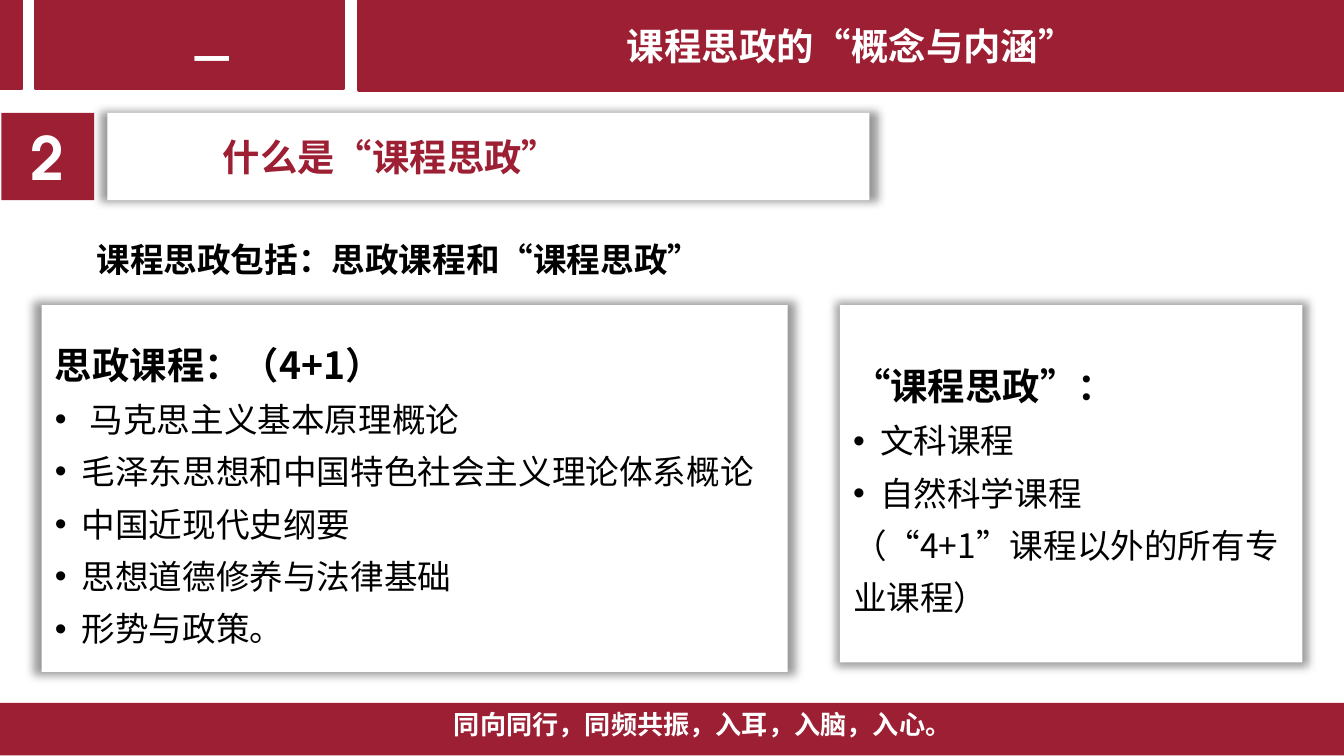
from lxml.etree import SubElement
from pptx import Presentation
from pptx.dml.color import RGBColor
from pptx.enum.shapes import MSO_SHAPE as Shape
from pptx.enum.text import MSO_ANCHOR as Anchor, MSO_AUTO_SIZE as AutoSize, PP_ALIGN as Align
from pptx.oxml.ns import qn
from pptx.util import Inches, Pt

COLORS = {"red": "9D1F33", "white": "FFFFFF", "black": "000000"}
BODY_FONT = "Noto Sans CJK SC"
NUMBER_FONT = "TeX Gyre Adventor"


def rgb(name):
    return RGBColor.from_string(COLORS[name])


def add_line(frame, text, size=18, bold=False, color="black", font=BODY_FONT,
             align=Align.LEFT, spacing=None, indent=0, bullet=False):
    """Write one paragraph, using the frame's empty first one if it is free."""
    first = frame.paragraphs[0]
    line = frame.add_paragraph() if first.runs else first
    line.alignment = align
    line.line_spacing = spacing
    run = line.add_run()
    run.text = text
    run.font.size, run.font.bold, run.font.name = Pt(size), bold, font
    run.font.color.rgb = rgb(color)
    SubElement(run.font._element, qn("a:ea"), typeface=font)
    properties = line._p.get_or_add_pPr()
    properties.set("marL", str(Inches(indent)))
    properties.set("indent", str(Inches(-indent if bullet else 0)))
    if bullet:
        SubElement(properties, qn("a:buFont"), typeface="Arial")
        SubElement(properties, qn("a:buChar"), char="•")


def paint(shape, fill, outline=None):
    shape.fill.solid()
    shape.fill.fore_color.rgb = rgb(fill)
    if outline:
        shape.line.color.rgb = rgb(outline)
        shape.line.width = Pt(2)
    else:
        shape.line.fill.background()


def add_block(slide, box, fill="red", outline=None):
    block = slide.shapes.add_shape(Shape.RECTANGLE, *map(Inches, box))
    block.shadow.inherit = False
    paint(block, fill, outline)
    block.text_frame.vertical_anchor = Anchor.MIDDLE
    return block


def add_card(slide, box):
    """Add a white panel with a soft shadow on all sides; return its text frame."""
    card = add_block(slide, box, "white")
    effects = card._element.spPr.find(qn("a:effectLst"))
    shadow = SubElement(effects, qn("a:outerShdw"), blurRad=str(Pt(5)), sx="102000",
                        sy="102000", algn="ctr", rotWithShape="0")
    tint = SubElement(shadow, qn("a:srgbClr"), val=COLORS["black"])
    SubElement(tint, qn("a:alpha"), val="40000")
    return card.text_frame


def add_label(slide, box, text, wrap=False, **text_format):
    frame = slide.shapes.add_textbox(*map(Inches, box)).text_frame
    frame.word_wrap = wrap
    add_line(frame, text, bold=True, **text_format)


def add_title(slide, box, text):
    title = slide.shapes.title
    title.left, title.top, title.width, title.height = map(Inches, box)
    paint(title, "red", "red")
    frame = title.text_frame
    frame.auto_size = AutoSize.NONE
    frame.vertical_anchor = Anchor.MIDDLE
    add_line(frame, text, size=20, bold=True, color="white", align=Align.CENTER)


def add_course_card(slide, box, heading, courses, note=None):
    frame = add_card(slide, box)
    add_line(frame, heading, size=20, bold=True, spacing=1.3)
    for course, indent in courses:
        add_line(frame, course, spacing=1.3, indent=indent, bullet=True)
    if note:
        add_line(frame, note, spacing=1.3)


def main():
    deck = Presentation()
    deck.slide_width = Inches(10)
    deck.slide_height = deck.slide_width * 9 // 16
    slide = deck.slides.add_slide(deck.slide_layouts[5])

    add_block(slide, (0, 5.23, 10.05, 0.39))
    add_label(slide, (3.28, 5.22, 3.93, 0.34), "同向同行，同频共振，入耳，入脑，入心。",
              size=14, color="white")

    for left, width in ((0, 0.16), (0.27, 2.28)):
        add_block(slide, (left, 0, width, 0.66), outline="red")
    add_title(slide, (2.67, 0.01, 7.33, 0.66), "课程思政的“概念与内涵”")
    add_label(slide, (1.34, 0.22, 0.48, 0.44), "一", size=20, color="white")

    number = add_block(slide, (0.01, 0.84, 0.69, 0.65)).text_frame
    add_line(number, "2", size=32, bold=True, color="white", font=NUMBER_FONT,
             align=Align.CENTER)
    question = add_card(slide, (0.8, 0.84, 5.67, 0.65))
    add_line(question, "什么是“课程思政”", size=20, bold=True, color="red", indent=0.76)

    add_label(slide, (0.62, 1.64, 5.7, 0.46), "课程思政包括：思政课程和“课程思政”",
              wrap=True, spacing=1.3)
    add_course_card(slide, (0.31, 2.27, 5.55, 2.73), "思政课程：（4+1）", [
        ("马克思主义基本原理概论", 0.26),
        ("毛泽东思想和中国特色社会主义理论体系概论", 0.2),
        ("中国近现代史纲要", 0.2),
        ("思想道德修养与法律基础", 0.2),
        ("形势与政策。", 0.2),
    ])
    add_course_card(slide, (6.25, 2.27, 3.44, 2.66), "“课程思政”：",
                    [("文科课程", 0.2), ("自然科学课程", 0.2)],
                    note="（“4+1”课程以外的所有专业课程）")

    deck.save("out.pptx")


if __name__ == "__main__":
    main()
